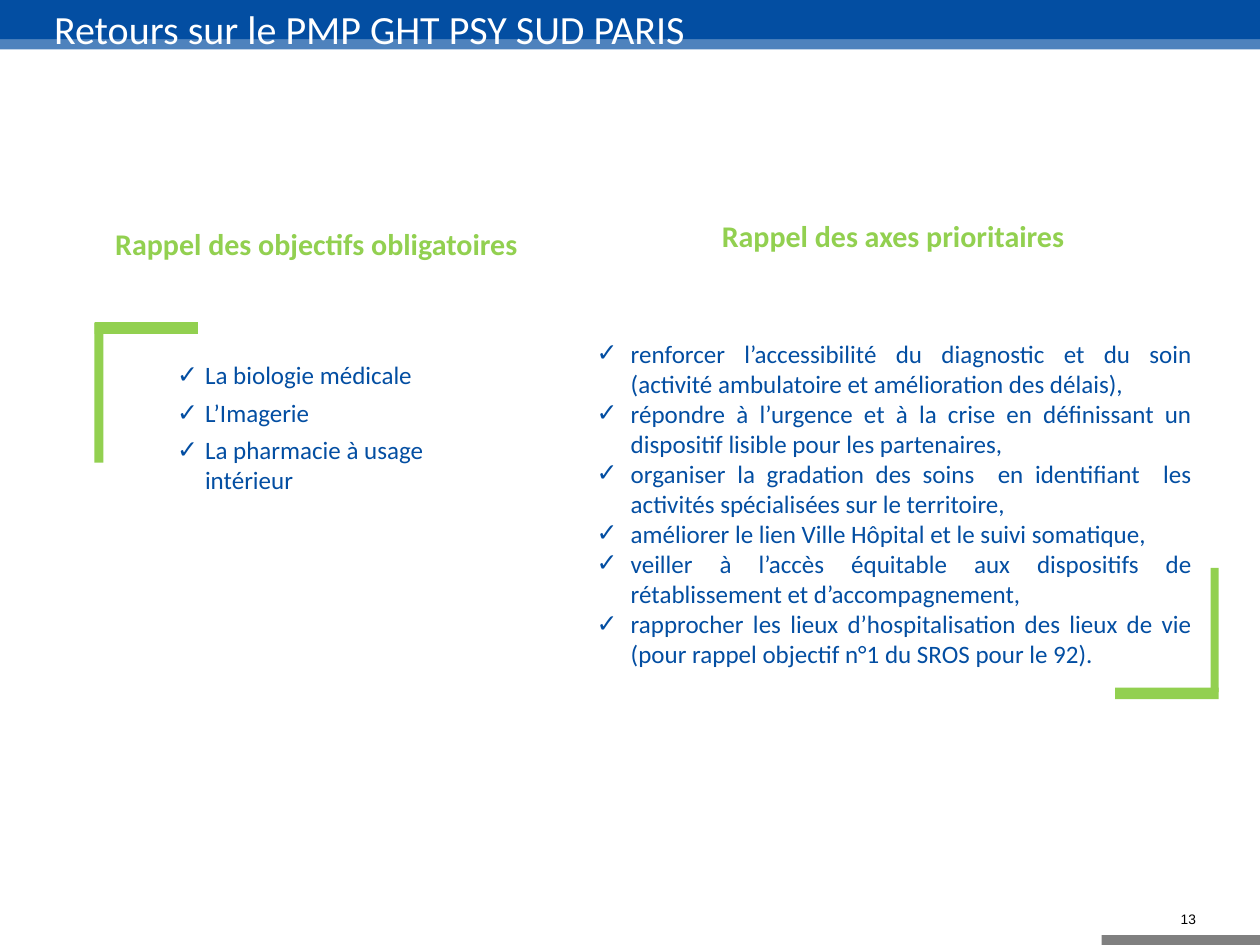
from lxml.etree import SubElement
from pptx import Presentation
from pptx.dml.color import RGBColor
from pptx.enum.shapes import MSO_SHAPE
from pptx.enum.text import MSO_ANCHOR, PP_ALIGN
from pptx.oxml.ns import qn
from pptx.util import Inches, Pt

BLUE, GREEN, GRAY = "034EA2", "92D050", "808080"

deck = Presentation()
deck.slide_width, deck.slide_height = Inches(14), Inches(10.5)
slide = deck.slides.add_slide(deck.slide_layouts[5])
shapes = slide.shapes


def write(box, lines, size, color, font="Calibri", bold=False,
          align=PP_ALIGN.LEFT, insets=(0.1, 0.05, 0.1, 0.05)):
    """Fill a text shape with one paragraph per line and format it."""
    frame = box.text_frame
    frame.word_wrap = True
    frame.margin_left, frame.margin_top, frame.margin_right, frame.margin_bottom = map(Inches, insets)
    frame.text = "\n".join(lines)
    for para in frame.paragraphs:
        para.alignment = align
        for run in para.runs:
            run.font.name, run.font.size, run.font.bold = font, Pt(size), bold
            run.font.color.rgb = RGBColor.from_string(color)
    return frame


def add_checks(frame, left, hang, after):
    """Give each paragraph a hanging check mark."""
    for para in frame.paragraphs:
        para.space_after = Pt(after)
        props = para._p.get_or_add_pPr()
        props.set("marL", str(Inches(left)))
        props.set("indent", str(-Inches(hang)))
        SubElement(props, qn("a:buFont"), typeface="Arial")
        SubElement(props, qn("a:buChar"), char="✓")


# Header and footer bands, then the green corner brackets
bars = [
    (0, 0.44, 14, 0.11, BLUE, 70),
    (0, 0, 14, 0.44, BLUE, 100),
    (12.24, 10.39, 1.76, 0.11, GRAY, 100),
    (1.05, 3.58, 1.15, 0.13, GREEN, 100),
    (1.05, 3.59, 0.1, 1.55, GREEN, 100),
    (12.39, 7.64, 1.15, 0.13, GREEN, 100),
    (13.45, 6.31, 0.09, 1.38, GREEN, 100),
]
for *place, color, alpha in bars:
    bar = shapes.add_shape(MSO_SHAPE.RECTANGLE, *map(Inches, place))
    bar.shadow.inherit = False
    bar.line.fill.background()
    bar.fill.solid()
    bar.fill.fore_color.rgb = RGBColor.from_string(color)
    if alpha < 100:
        tint = bar._element.spPr.find(".//" + qn("a:srgbClr"))
        SubElement(tint, qn("a:alpha"), val=str(alpha * 1000))

# Title, brought in front of the bands
title = shapes.title
title.left, title.top, title.width, title.height = map(Inches, (0.6, 0.09, 12.73, 0.46))
frame = write(title, ["Retours sur le PMP GHT PSY SUD PARIS"], 32, "FFFFFF", insets=(0, 0, 0, 0))
frame.vertical_anchor = MSO_ANCHOR.MIDDLE
shapes._spTree.append(title._element)

# Column headings
heads = [
    ("Rappel des objectifs obligatoires", 1.28, 2.46, 4.62, 0.56),
    ("Rappel des axes prioritaires", 8.02, 2.37, 4.37, 0.76),
]
for text, *place in heads:
    box = shapes.add_textbox(*map(Inches, place))
    write(box, [text], 24, GREEN, bold=True, insets=(0, 0.05, 0.1, 0.05))

# Mandatory goals
goals = ["La biologie médicale", "L’Imagerie", "La pharmacie à usage intérieur"]
box = shapes.add_textbox(*map(Inches, (1.41, 3.95, 4.33, 1.6)))
add_checks(write(box, goals, 20, BLUE), 0.77, 0.31, 6)

# Priority axes
axes = [
    "renforcer l’accessibilité du diagnostic et du soin (activité ambulatoire et amélioration des délais),",
    "répondre à l’urgence et à la crise en définissant un dispositif lisible pour les partenaires,",
    "organiser la gradation des soins  en identifiant  les activités spécialisées sur le territoire,",
    "améliorer le lien Ville Hôpital et le suivi somatique,",
    "veiller à l’accès équitable aux dispositifs de rétablissement et d’accompagnement,",
    "rapprocher les lieux d’hospitalisation des lieux de vie (pour rappel objectif n°1 du SROS pour le 92).",
]
box = shapes.add_textbox(*map(Inches, (6.53, 3.71, 6.81, 3.78)))
add_checks(write(box, axes, 20, BLUE, align=PP_ALIGN.JUSTIFY), 0.38, 0.38, 0)

# Page number
box = shapes.add_textbox(*map(Inches, (11.57, 10.12, 1.76, 0.19)))
frame = write(box, ["13"], 11, "000000", font="Arial", align=PP_ALIGN.RIGHT, insets=(0.04, 0, 0.04, 0))
frame.vertical_anchor = MSO_ANCHOR.MIDDLE

deck.save("out.pptx")
